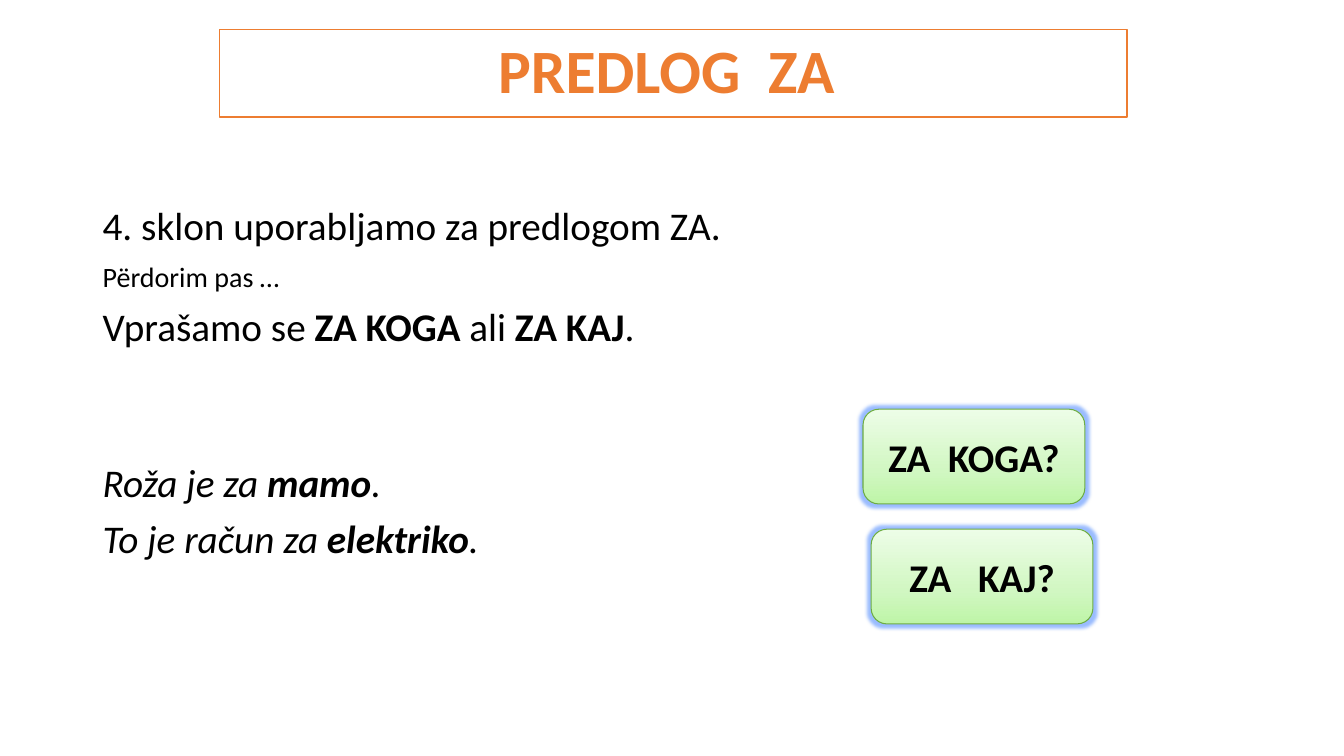
from copy import deepcopy
from dataclasses import dataclass

from lxml import etree
from pptx import Presentation
from pptx.dml.color import RGBColor
from pptx.enum.shapes import MSO_SHAPE
from pptx.enum.text import MSO_ANCHOR, MSO_AUTO_SIZE, PP_ALIGN
from pptx.oxml.ns import qn
from pptx.util import Inches, Pt

TITLE_ONLY = 5
ROUNDED = MSO_SHAPE.ROUNDED_RECTANGLE
MIDDLE = MSO_ANCHOR.MIDDLE
CENTER = PP_ALIGN.CENTER
NO_AUTOFIT = MSO_AUTO_SIZE.NONE

FONT = "Calibri"
BLACK, WHITE, ORANGE, GREEN = "000000", "FFFFFF", "ED7D31", "6DAC43"
GLOW_BLUE = "9BBDFF"
GREEN_STOPS = ((0, "BEF5A7"), (0.35, "D1F7C2"), (1, "EDFDE7"))


@dataclass
class Span:
    text: str
    bold: bool = False


@dataclass
class Line:
    spans: list[Span]
    size: int = 28
    before: float = 10
    italic: bool = False


@dataclass
class Question:
    text: str
    left: float
    top: float


LINES = [
    Line([Span("4. sklon uporabljamo za predlogom ZA.")]),
    Line([Span("Përdorim pas …")], size=20),
    Line([Span("Vprašamo se "), Span("ZA KOGA ", True), Span("ali "),
          Span("ZA KAJ", True), Span(".")]),
    Line([Span("Roža je za "), Span("mamo", True), Span(".")],
         before=81.5, italic=True),
    Line([Span("To je račun za "), Span("elektriko", True), Span(".")],
         italic=True),
]
QUESTIONS = [Question("ZA  KOGA?", 8.56, 4.06), Question("ZA   KAJ?", 8.64, 5.25)]


def color(value: str) -> RGBColor:
    return RGBColor.from_string(value)


def set_all(target, **values) -> None:
    """Set each named attribute of the target."""
    for name, value in values.items():
        setattr(target, name, value)


def add_span(para, span: Span, size: int, ink: str, italic: bool = False) -> None:
    run = para.add_run()
    run.text = span.text
    set_all(run.font, name=FONT, size=Pt(size), bold=span.bold, italic=italic)
    run.font.color.rgb = color(ink)


def set_outline(box, ink: str, width: float) -> None:
    box.line.color.rgb = color(ink)
    box.line.width = Pt(width)


def fill_title(title) -> None:
    set_all(title, left=Inches(2.18), top=Inches(0.29),
            width=Inches(9), height=Inches(0.87))
    title.fill.solid()
    title.fill.fore_color.rgb = color(WHITE)
    set_outline(title, ORANGE, 1)
    set_all(title.text_frame, vertical_anchor=MIDDLE, word_wrap=True,
            auto_size=NO_AUTOFIT)
    para = title.text_frame.paragraphs[0]
    set_all(para, alignment=CENTER, line_spacing=0.9)
    add_span(para, Span("PREDLOG  ZA ", True), 44, ORANGE)


def add_body(page) -> None:
    box = page.shapes.add_textbox(Inches(0.92), Inches(2), Inches(11.5), Inches(4.76))
    frame = box.text_frame
    frame.word_wrap = True
    for index, line in enumerate(LINES):
        para = frame.add_paragraph() if index else frame.paragraphs[0]
        set_all(para, line_spacing=0.9, space_before=Pt(line.before))
        for span in line.spans:
            add_span(para, span, line.size, BLACK, line.italic)


def fill_gradient(box) -> None:
    box.fill.gradient()
    box.fill.gradient_angle = 90
    stops = box.fill.gradient_stops
    for stop, (position, shade) in zip(stops, (GREEN_STOPS[0], GREEN_STOPS[-1])):
        stop.position = position
        stop.color.rgb = color(shade)
    stop_list = box.element.spPr.find(f".//{qn('a:gsLst')}")
    middle = deepcopy(stop_list[0])
    position, shade = GREEN_STOPS[1]
    middle.set("pos", str(round(position * 100000)))
    middle.find(qn("a:srgbClr")).set("val", shade)
    stop_list.insert(1, middle)


def add_glow(box) -> None:
    box.shadow.inherit = False
    effects = box.element.spPr.find(qn("a:effectLst"))
    glow = etree.SubElement(effects, qn("a:glow"), rad=str(Pt(5)))
    etree.SubElement(glow, qn("a:srgbClr"), val=GLOW_BLUE)


def add_question(page, question: Question) -> None:
    box = page.shapes.add_shape(ROUNDED, Inches(question.left), Inches(question.top),
                                Inches(2.2), Inches(0.94))
    fill_gradient(box)
    set_outline(box, GREEN, 0.75)
    add_glow(box)
    set_all(box.text_frame, vertical_anchor=MIDDLE, word_wrap=True)
    para = box.text_frame.paragraphs[0]
    para.alignment = CENTER
    add_span(para, Span(question.text, True), 28, BLACK)


def main() -> None:
    deck = Presentation()
    set_all(deck, slide_width=Inches(13.33), slide_height=Inches(7.5))
    page = deck.slides.add_slide(deck.slide_layouts[TITLE_ONLY])
    fill_title(page.shapes.title)
    add_body(page)
    for question in QUESTIONS:
        add_question(page, question)
    deck.save("out.pptx")


if __name__ == "__main__":
    main()
